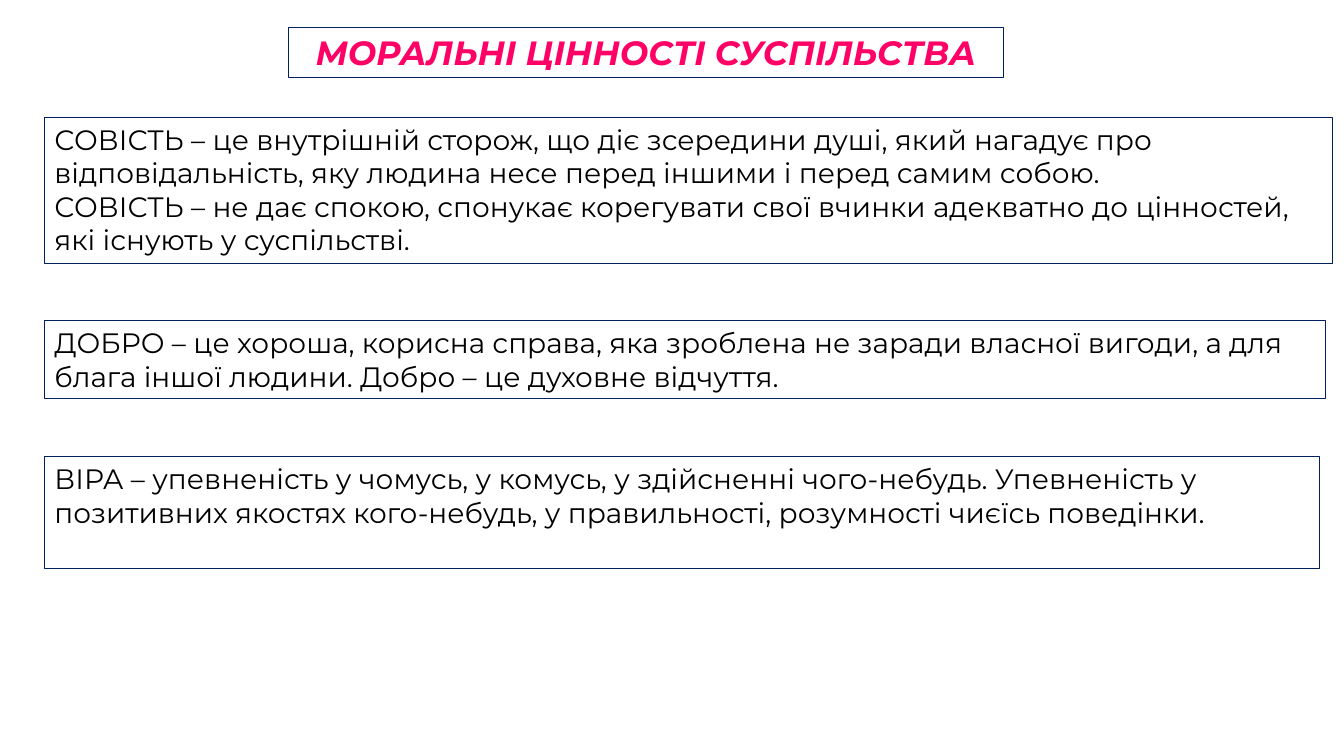
from dataclasses import dataclass

import pptx
import pptx.dml.color
import pptx.enum.text
import pptx.util


@dataclass(frozen=True)
class Theme:
    font: str = "Montserrat"
    title_size: int = 24
    body_size: int = 20
    border_width: float = 0.75
    paper: str = "FFFFFF"
    border: str = "002060"
    title: str = "FF0066"
    body: str = "000000"


def color(code):
    return pptx.dml.color.RGBColor.from_string(code)


class SlideBuilder:
    def __init__(self, slide, theme):
        self.slide = slide
        self.theme = theme

    def frame(self, shape, left, top, width, height):
        """Place a shape, give it the bordered style and return its text frame."""
        shape.left, shape.top = pptx.util.Pt(left), pptx.util.Pt(top)
        shape.width, shape.height = pptx.util.Pt(width), pptx.util.Pt(height)
        shape.fill.solid()
        shape.fill.fore_color.rgb = color(self.theme.paper)
        shape.line.color.rgb = color(self.theme.border)
        shape.line.width = pptx.util.Pt(self.theme.border_width)
        text_frame = shape.text_frame
        text_frame.auto_size = pptx.enum.text.MSO_AUTO_SIZE.NONE
        text_frame.vertical_anchor = pptx.enum.text.MSO_ANCHOR.TOP
        return text_frame

    def add_text(self, paragraph, text, size, code, emphasis=False):
        run = paragraph.add_run()
        run.text = text
        run.font.name = self.theme.font
        run.font.size = pptx.util.Pt(size)
        run.font.bold = run.font.italic = emphasis
        run.font.color.rgb = color(code)

    def title(self, text, *box):
        text_frame = self.frame(self.slide.shapes.title, *box)
        text_frame.word_wrap = False
        paragraph = text_frame.paragraphs[0]
        paragraph.alignment = pptx.enum.text.PP_ALIGN.CENTER
        self.add_text(paragraph, text, self.theme.title_size, self.theme.title, True)

    def definition(self, texts, *box):
        shape = self.slide.shapes.add_textbox(0, 0, 0, 0)
        text_frame = self.frame(shape, *box)
        text_frame.word_wrap = True
        for index, text in enumerate(texts):
            paragraph = text_frame.add_paragraph() if index else text_frame.paragraphs[0]
            self.add_text(paragraph, text, self.theme.body_size, self.theme.body)


LEFT = 31.8
DEFINITIONS = [
    (83.7, 919.7, 104.7, [
        "СОВІСТЬ – це внутрішній сторож, що діє зсередини душі, який нагадує про "
        "відповідальність, яку людина несе перед іншими і перед самим собою.",
        "СОВІСТЬ – не дає спокою, спонукає корегувати свої вчинки адекватно до "
        "цінностей, які існують у суспільстві.",
    ]),
    (228.9, 915.3, 55.7, [
        "ДОБРО – це хороша, корисна справа, яка зроблена не заради власної вигоди, "
        "а для блага іншої людини. Добро – це духовне відчуття.",
    ]),
    (326.1, 911, 80, [
        "ВІРА – упевненість у чомусь, у комусь, у здійсненні чого-небудь. "
        "Упевненість у позитивних якостях кого-небудь, у правильності, "
        "розумності чиєїсь поведінки.",
    ]),
]


def main():
    presentation = pptx.Presentation()
    presentation.slide_width = pptx.util.Pt(960)
    presentation.slide_height = pptx.util.Pt(540)
    slide = presentation.slides.add_slide(presentation.slide_layouts.get_by_name("Title Only"))
    builder = SlideBuilder(slide, Theme())
    builder.title("МОРАЛЬНІ ЦІННОСТІ СУСПІЛЬСТВА", 206, 19.4, 510.5, 36.3)
    for top, width, height, texts in DEFINITIONS:
        builder.definition(texts, LEFT, top, width, height)
    presentation.save("out.pptx")


if __name__ == "__main__":
    main()
